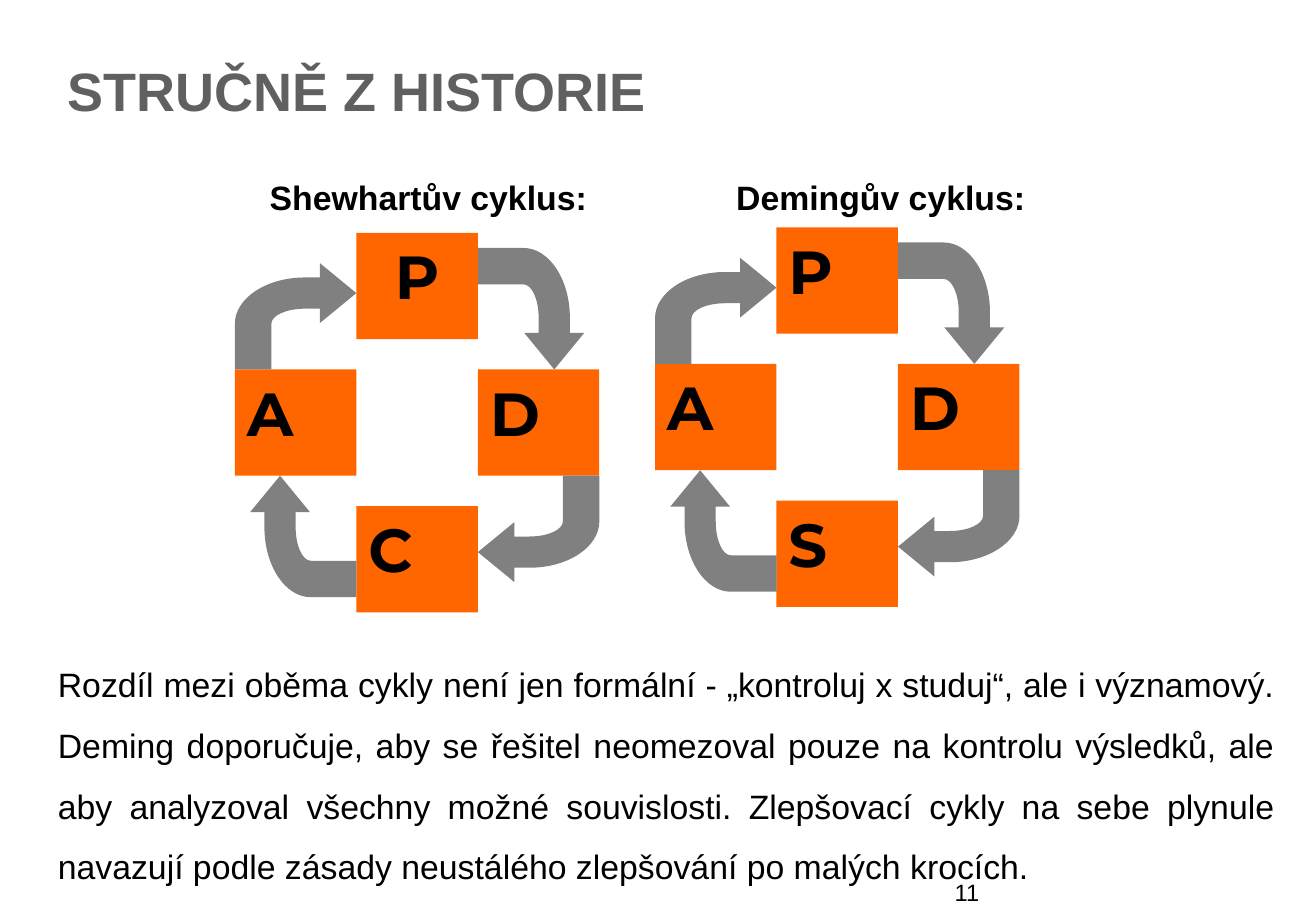
from lxml import etree
from pptx import Presentation
from pptx.dml.color import RGBColor
from pptx.enum.shapes import MSO_SHAPE
from pptx.enum.text import MSO_ANCHOR, PP_ALIGN
from pptx.oxml.ns import qn
from pptx.util import Pt

ORANGE = RGBColor(0xFF, 0x66, 0x00)
GREY = RGBColor(0x80, 0x80, 0x80)
TITLE_GREY = RGBColor(0x60, 0x60, 0x60)
BLACK = RGBColor(0, 0, 0)

STEP_WIDTH, STEP_HEIGHT = 72, 63
STEP_PLACES = [(72, 0), (144, 81), (72, 162), (0, 81)]
ARROW_PLACES = [(0, 18, 0), (139.5, 13.5, 90), (144, 144, 180), (4.5, 148.5, 270)]
ARROW_OUTLINE = [
    (72, 17.75), (50.4, 0), (50.4, 8.5), (41.5, 8.5),
    (18.6, 8.5), (0, 20.8), (0, 36),
    (0, 63), (21.6, 63), (21.6, 36),
    (21.6, 31), (30.5, 27), (41.5, 27),
    (50.4, 27), (50.4, 35.5),
]
CURVE_STARTS = (4, 10)
EXPLANATION = (
    "Rozdíl mezi oběma cykly není jen formální - „kontroluj x studuj“, "
    "ale i významový. Deming doporučuje, aby se řešitel neomezoval pouze "
    "na kontrolu výsledků, ale aby analyzoval všechny možné souvislosti. "
    "Zlepšovací cykly na sebe plynule navazují podle zásady neustálého "
    "zlepšování po malých krocích."
)


def style(paragraph, size, color=BLACK, bold=False, name="Arial"):
    font = paragraph.font
    font.name, font.size, font.bold = name, Pt(size), bold
    font.color.rgb = color


def paint(shape, color):
    shape.shadow.inherit = False
    shape.fill.solid()
    shape.fill.fore_color.rgb = color
    shape.line.fill.background()


def add_title(slide, text):
    title = slide.shapes.title
    title.left, title.top, title.width, title.height = Pt(33), Pt(30.25), Pt(663), Pt(53.5)
    title.text_frame.vertical_anchor = MSO_ANCHOR.MIDDLE
    title.text_frame.text = text
    paragraph = title.text_frame.paragraphs[0]
    paragraph.alignment = PP_ALIGN.LEFT
    paragraph.line_spacing = 0.8
    style(paragraph, 32, TITLE_GREY, True)


def add_text(slide, text, left, top, width, height, size, bold=False, tabs=()):
    frame = slide.shapes.add_textbox(Pt(left), Pt(top), Pt(width), Pt(height)).text_frame
    frame.word_wrap = True
    frame.text = text
    paragraph = frame.paragraphs[0]
    if tabs:
        stops = etree.SubElement(paragraph._p.get_or_add_pPr(), qn("a:tabLst"))
        for position in tabs:
            etree.SubElement(stops, qn("a:tab"), pos=str(Pt(position)), algn="l")
    style(paragraph, size, bold=bold)
    return paragraph


def add_step(slide, letter, left, top, alignment):
    step = slide.shapes.add_shape(
        MSO_SHAPE.RECTANGLE, Pt(left), Pt(top), Pt(STEP_WIDTH), Pt(STEP_HEIGHT))
    paint(step, ORANGE)
    step.text_frame.vertical_anchor = MSO_ANCHOR.TOP
    step.text_frame.text = letter
    paragraph = step.text_frame.paragraphs[0]
    paragraph.alignment = alignment
    style(paragraph, 36, bold=True, name="Montserrat")


def bend(shape):
    segments = list(shape._element.iter(qn("a:lnTo")))
    for start in CURVE_STARTS:
        first, *others = segments[start - 1:start + 2]
        first.tag = qn("a:cubicBezTo")
        for segment in others:
            first.append(segment[0])
            segment.getparent().remove(segment)


def add_bent_arrow(slide, left, top, rotation):
    points = [(Pt(left + x), Pt(top + y)) for x, y in ARROW_OUTLINE]
    builder = slide.shapes.build_freeform(*points[0])
    builder.add_line_segments(points[1:], close=True)
    arrow = builder.convert_to_shape()
    bend(arrow)
    arrow.rotation = rotation
    paint(arrow, GREY)


def add_cycle(slide, letters, left, top, first_alignment):
    alignments = [first_alignment] + [PP_ALIGN.JUSTIFY] * 3
    for letter, (x, y), alignment in zip(letters, STEP_PLACES, alignments):
        add_step(slide, letter, left + x, top + y, alignment)
    for x, y, rotation in ARROW_PLACES:
        add_bent_arrow(slide, left + x, top + y, rotation)


def main():
    deck = Presentation()
    deck.slide_width, deck.slide_height = Pt(780), Pt(540)
    slide = deck.slides.add_slide(deck.slide_layouts[5])

    add_title(slide, "STRUČNĚ Z HISTORIE")
    headings = add_text(slide, "\tShewhartův cyklus:\tDemingův cyklus:",
                        8.75, 89.25, 753.75, 260.75, 20, True, tabs=(144, 420.5))
    headings.alignment = PP_ALIGN.JUSTIFY
    headings.line_spacing = 1.5
    add_cycle(slide, "PDSA", 388.25, 134.75, PP_ALIGN.JUSTIFY)
    add_cycle(slide, "PDCA", 139.25, 138, PP_ALIGN.CENTER)
    explanation = add_text(slide, EXPLANATION, 27.25, 378, 735.75, 152.5, 20)
    explanation.alignment = PP_ALIGN.JUSTIFY
    explanation.line_spacing = 1.5
    add_text(slide, "11", 558.75, 517, 182, 12.5, 14)

    deck.save("out.pptx")


if __name__ == "__main__":
    main()
